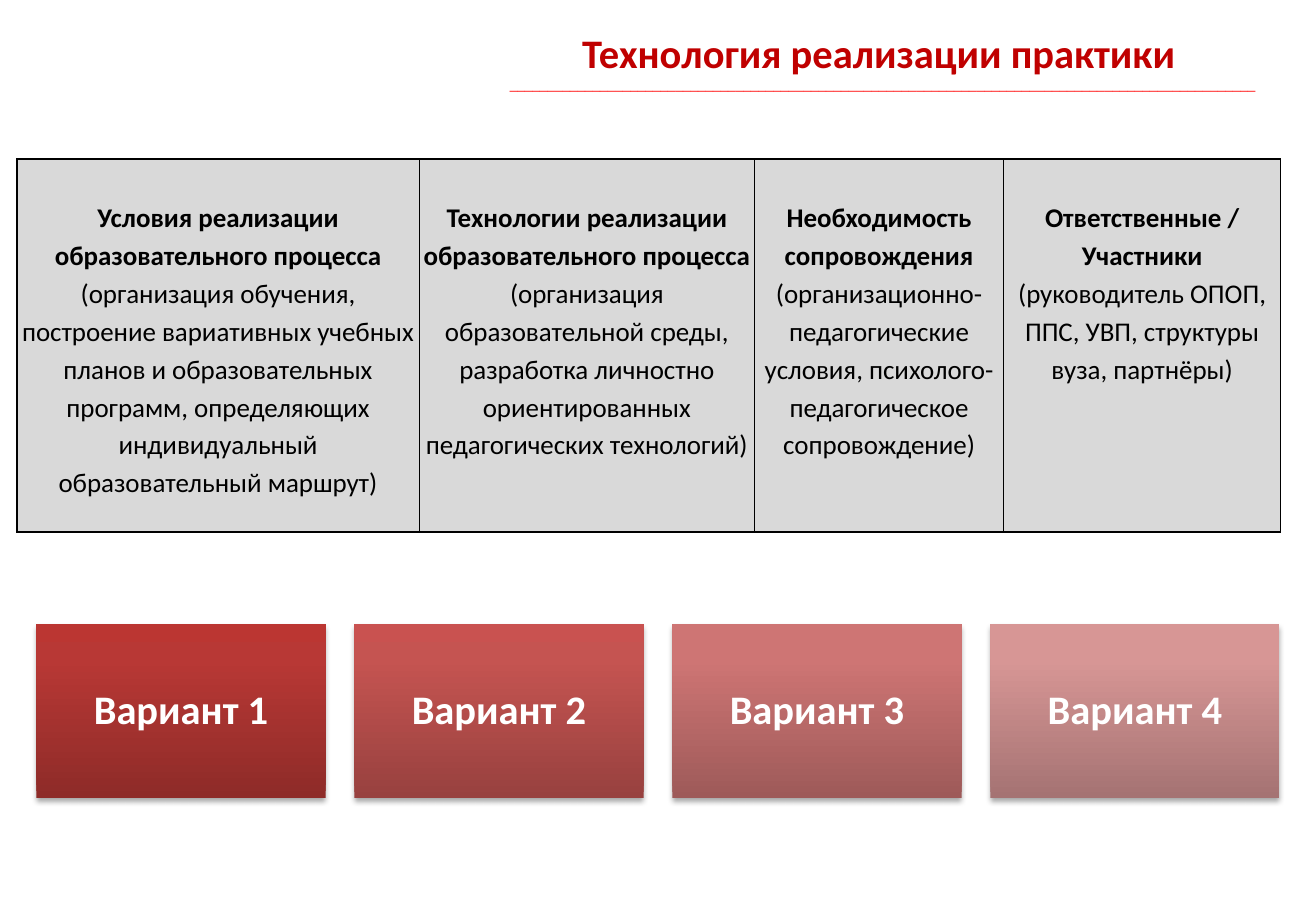
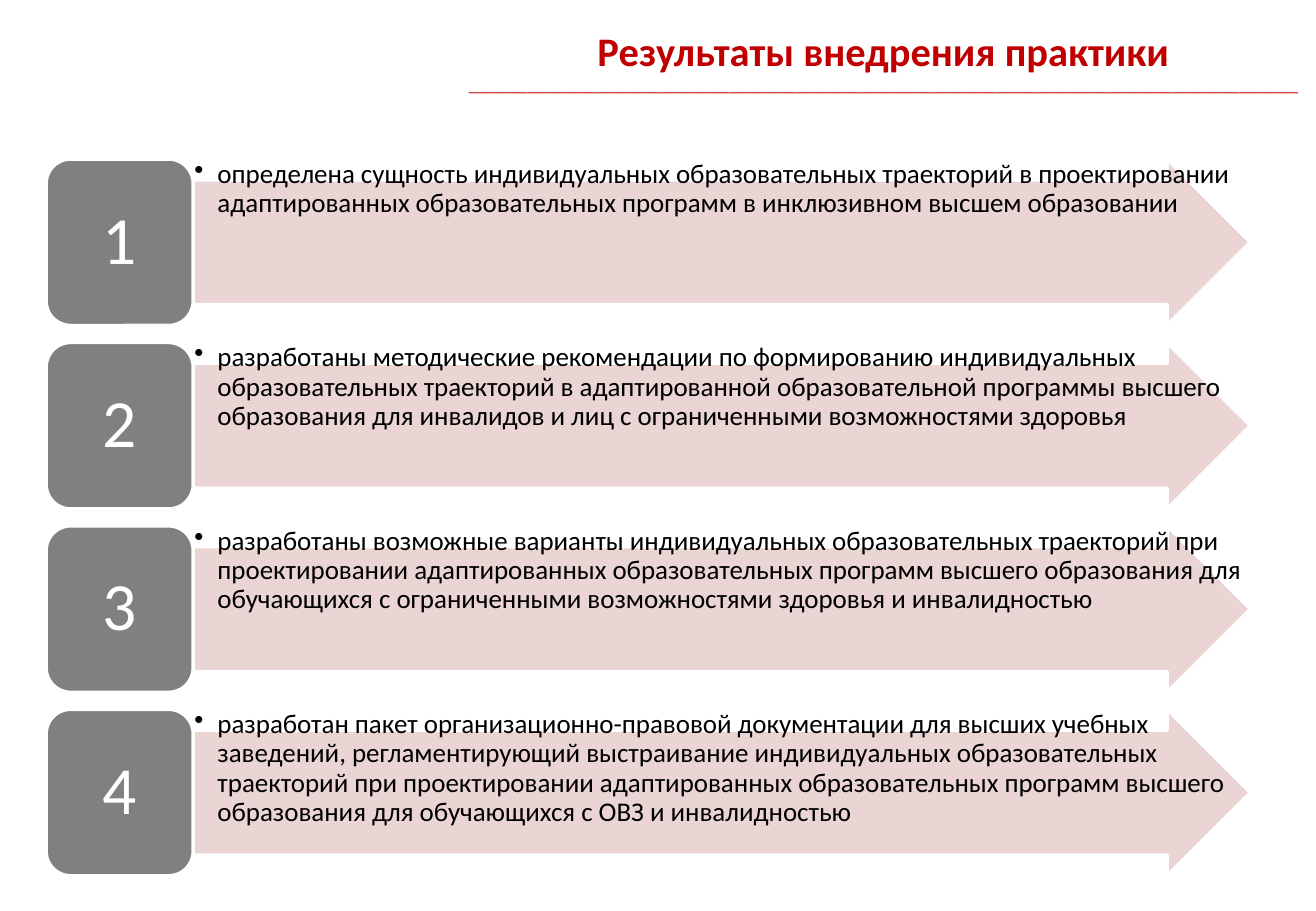
import copy
from dataclasses import dataclass

import pptx
import pptx.util
import pptx.dml.color
import pptx.enum.shapes
import pptx.enum.text
import pptx.oxml
import pptx.oxml.ns
from pptx.util import Inches

SHAPE = pptx.enum.shapes.MSO_SHAPE
ALIGN = pptx.enum.text.PP_ALIGN
ANCHOR = pptx.enum.text.MSO_ANCHOR
qn = pptx.oxml.ns.qn


@dataclass(frozen=True)
class Theme:
    font: str = "Calibri"
    rule_font: str = "Arial"
    title: str = "C00000"
    rule: str = "FF0000"
    text: str = "000000"
    light: str = "FFFFFF"
    cell: str = "D9D9D9"
    badge: str = "808080"
    arrow: str = "E8D0D0"
    variants: tuple = (
        ("8E2B28", "B83835", "BB3632"),
        ("98413F", "C55451", "C95250"),
        ("9E5A59", "CE7574", "D07472"),
        ("A57373", "D79695", "D99594"),
    )
    title_size: int = 24
    body_size: int = 16
    badge_size: int = 40


THEME = Theme()


@dataclass(frozen=True)
class Box:
    """A rectangle in inches."""
    x: float
    y: float
    w: float
    h: float

    def emu(self):
        return [Inches(v) for v in (self.x, self.y, self.w, self.h)]


TITLE_BOX = Box(3.71, 0, 7.12, 0.99)

CONDITIONS = [
    (3.31, "Условия реализации образовательного процесса",
     "(организация обучения, построение вариативных учебных планов и образовательных программ, "
     "определяющих индивидуальный образовательный маршрут)"),
    (2.76, "Технологии реализации образовательного процесса",
     "(организация образовательной среды, разработка личностно ориентированных "
     "педагогических технологий)"),
    (2.05, "Необходимость сопровождения",
     "(организационно-педагогические условия, психолого-педагогическое сопровождение)"),
    (2.28, "Ответственные / Участники",
     "(руководитель ОПОП, ППС, УВП, структуры вуза, партнёры)"),
]

RESULTS = [
    "определена сущность индивидуальных образовательных траекторий в проектировании "
    "адаптированных образовательных программ в инклюзивном высшем образовании",
    "разработаны методические рекомендации по формированию индивидуальных образовательных "
    "траекторий в адаптированной образовательной программы высшего образования для инвалидов "
    "и лиц с ограниченными возможностями здоровья",
    "разработаны возможные варианты индивидуальных образовательных траекторий при "
    "проектировании адаптированных образовательных программ высшего образования для "
    "обучающихся с ограниченными возможностями здоровья и инвалидностью",
    "разработан пакет организационно-правовой документации для высших учебных заведений, "
    "регламентирующий выстраивание индивидуальных образовательных траекторий при "
    "проектировании адаптированных образовательных программ высшего образования для "
    "обучающихся с ОВЗ и инвалидностью",
]


def rgb(color):
    return pptx.dml.color.RGBColor.from_string(color)


def style(p, size, color, bold=False, font=THEME.font, align=ALIGN.CENTER, spacing=None):
    p.alignment = align
    if spacing:
        p.line_spacing = spacing
    p.font.name = font
    p.font.size = pptx.util.Pt(size)
    p.font.bold = bold
    p.font.color.rgb = rgb(color)


def set_frame(tf, dx, dy, anchor=ANCHOR.MIDDLE):
    tf.word_wrap = True
    tf.auto_size = pptx.enum.text.MSO_AUTO_SIZE.NONE
    tf.vertical_anchor = anchor
    tf.margin_left = tf.margin_right = Inches(dx)
    tf.margin_top = tf.margin_bottom = Inches(dy)


def add_titled_slide(prs, title, rule_size, rule_font, rule_color):
    slide = prs.slides.add_slide(prs.slide_layouts[5])
    sp = slide.shapes.title
    sp.left, sp.top, sp.width, sp.height = TITLE_BOX.emu()
    tf = sp.text_frame
    set_frame(tf, 0.1, 0.05)
    p = tf.paragraphs[0]
    p.text = title
    style(p, THEME.title_size, THEME.title, bold=True)
    p = tf.add_paragraph()
    p.text = "_" * 99
    style(p, rule_size, rule_color, font=rule_font)
    return slide


def add_flat_shape(slide, kind, box, color):
    """Add a filled shape with a white outline and no shadow."""
    sp = slide.shapes.add_shape(kind, *box.emu())
    sp.shadow.inherit = False
    sp.fill.solid()
    sp.fill.fore_color.rgb = rgb(color)
    sp.line.color.rgb = rgb(THEME.light)
    sp.line.width = pptx.util.Pt(2)
    return sp


def set_borders(cell):
    tc_pr = cell._tc.get_or_add_tcPr()
    for side in ("lnL", "lnR", "lnT", "lnB"):
        tc_pr.append(pptx.oxml.parse_xml(
            f'<a:{side} {pptx.oxml.ns.nsdecls("a")} w="12700"><a:solidFill>'
            f'<a:srgbClr val="{THEME.text}"/></a:solidFill></a:{side}>'))


def add_conditions_table(slide, box):
    table = slide.shapes.add_table(1, len(CONDITIONS), *box.emu()).table
    table.first_row = table.horz_banding = False
    for i, (width, heading, detail) in enumerate(CONDITIONS):
        table.columns[i].width = Inches(width)
        cell = table.cell(0, i)
        set_borders(cell)
        cell.fill.solid()
        cell.fill.fore_color.rgb = rgb(THEME.cell)
        cell.margin_left = cell.margin_right = Inches(0.03)
        cell.margin_top, cell.margin_bottom = Inches(0.31), 0
        tf = cell.text_frame
        tf.text = f"{heading}\n{detail}"
        for p, bold in zip(tf.paragraphs, (True, False)):
            style(p, THEME.body_size, THEME.text, bold, spacing=1.15)


def set_gradient(sp, colors):
    sp.fill.gradient()
    sp.fill.gradient_angle = 90
    gs_lst = sp._element.spPr.find(".//" + qn("a:gsLst"))
    gs_lst.append(copy.deepcopy(gs_lst[0]))
    for stop, position, color in zip(sp.fill.gradient_stops, (0, 0.8, 1), colors):
        stop.position = position
        stop.color.rgb = rgb(color)


def set_shadow(sp):
    sp.shadow.inherit = False
    sp._element.spPr.find(qn("a:effectLst")).append(pptx.oxml.parse_xml(
        f'<a:outerShdw {pptx.oxml.ns.nsdecls("a")} blurRad="40000" dist="23000" dir="5400000" '
        'rotWithShape="0"><a:srgbClr val="000000"><a:alpha val="35000"/></a:srgbClr>'
        '</a:outerShdw>'))


def add_variants(slide, box, width=2.38):
    """Spread the variant cards evenly across the box."""
    pitch = (box.w - width) / (len(THEME.variants) - 1)
    for i, colors in enumerate(THEME.variants):
        card = Box(box.x + i * pitch, box.y, width, box.h)
        sp = slide.shapes.add_shape(SHAPE.RECTANGLE, *card.emu())
        set_gradient(sp, colors)
        set_shadow(sp)
        sp.line.fill.background()
        set_frame(sp.text_frame, 0.1, 0.1)
        p = sp.text_frame.paragraphs[0]
        p.text = f"Вариант {i + 1}"
        style(p, THEME.title_size, THEME.light, bold=True, spacing=0.9)


def set_bullet(p, indent=0.19):
    p_pr = p._p.get_or_add_pPr()
    p_pr.set("marL", str(Inches(indent)))
    p_pr.set("indent", str(-Inches(indent)))
    p_pr.append(pptx.oxml.parse_xml(f'<a:buChar {pptx.oxml.ns.nsdecls("a")} char="•"/>'))


def add_result(slide, box, number, text, badge_width=1.21):
    """Place a numbered badge and, to its right, an arrow with a bulleted text."""
    body = Box(box.x + badge_width, box.y, box.w - badge_width, box.h)
    arrow = add_flat_shape(slide, SHAPE.RIGHT_ARROW, body, THEME.arrow)
    arrow.adjustments[0], arrow.adjustments[1] = 0.75, 0.5
    color = arrow._element.spPr.find(qn("a:solidFill")).find(qn("a:srgbClr"))
    color.append(pptx.oxml.parse_xml(
        f'<a:alpha {pptx.oxml.ns.nsdecls("a")} val="90000"/>'))

    tf = slide.shapes.add_textbox(*body.emu()).text_frame
    set_frame(tf, 0.01, 0.01, ANCHOR.TOP)
    p = tf.paragraphs[0]
    p.text = text
    set_bullet(p)
    style(p, THEME.body_size, THEME.text, align=ALIGN.LEFT, spacing=0.9)

    badge = add_flat_shape(slide, SHAPE.ROUNDED_RECTANGLE,
                           Box(box.x, box.y, badge_width, box.h), THEME.badge)
    set_frame(badge.text_frame, 0.17, 0.08)
    p = badge.text_frame.paragraphs[0]
    p.text = str(number)
    style(p, THEME.badge_size, THEME.light, spacing=0.9)


def add_results(slide, box, row_height=1.37):
    pitch = (box.h - row_height) / (len(RESULTS) - 1)
    for i, text in enumerate(RESULTS):
        add_result(slide, Box(box.x, box.y + i * pitch, box.w, row_height), i + 1, text)


def main():
    prs = pptx.Presentation()
    prs.slide_width, prs.slide_height = Inches(10.83), Inches(7.5)

    slide = add_titled_slide(prs, "Технология реализации практики ",
                             8, THEME.rule_font, THEME.rule)
    add_conditions_table(slide, Box(0.14, 1.31, 10.4, 3.07))
    add_variants(slide, Box(0.3, 5.14, 10.23, 1.43))

    slide = add_titled_slide(prs, "Результаты внедрения практики",
                             10, THEME.font, THEME.title)
    add_results(slide, Box(0.38, 1.31, 9.91, 5.9))

    prs.save("out.pptx")


if __name__ == "__main__":
    main()
